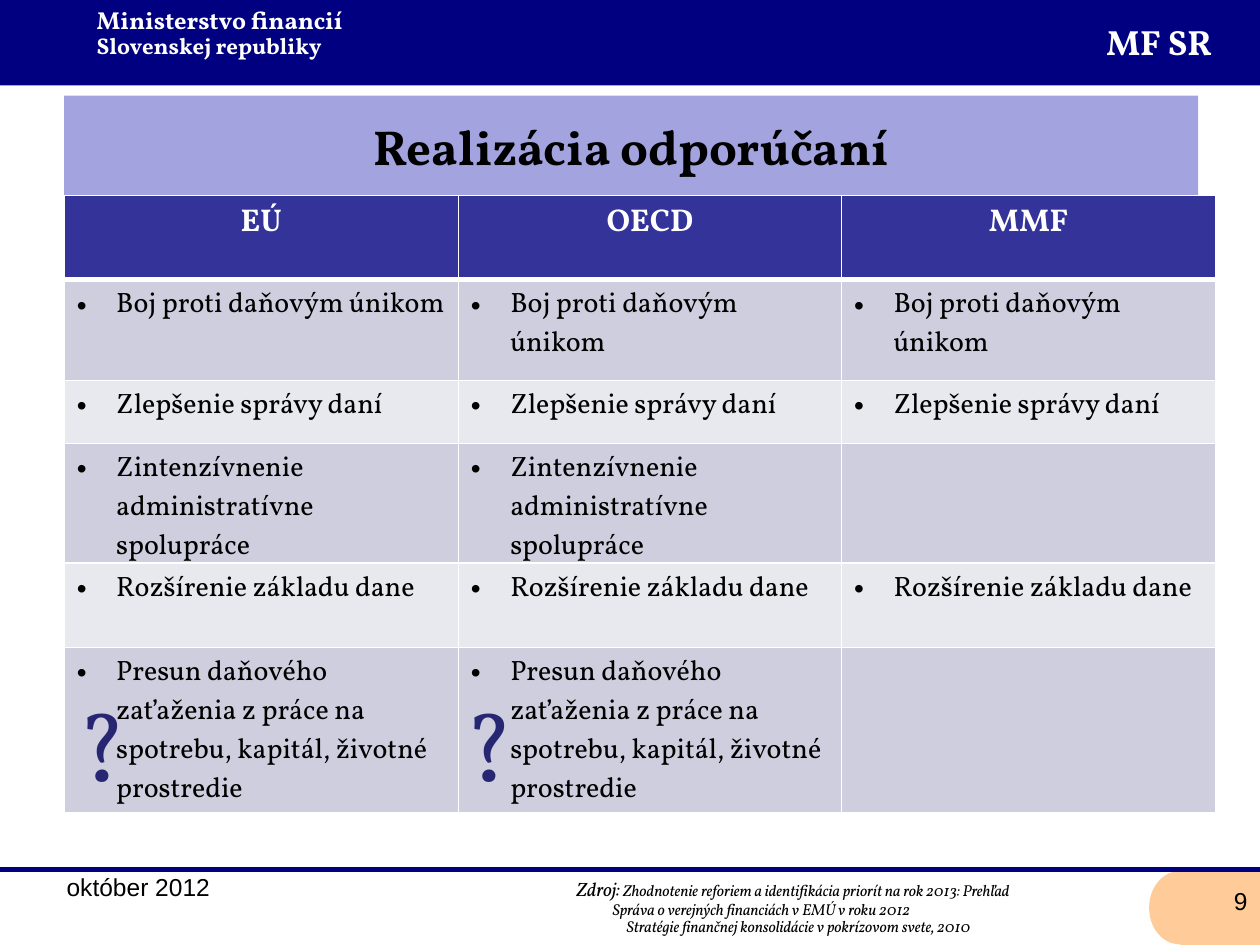
from lxml import etree
from pptx import Presentation
from pptx.dml.color import RGBColor
from pptx.enum import shapes, text
from pptx.oxml import ns
from pptx.util import Pt

COLORS = {
    "navy": "000080", "peach": "FFCC99", "lilac": "A3A3E0", "header": "333399",
    "odd": "CECEDE", "even": "E8E8EF", "mark": "262673",
    "white": "FFFFFF", "black": "000000",
}
SERIF, SANS = "Vollkorn", "Arial"
CENTER, RIGHT = text.PP_ALIGN.CENTER, text.PP_ALIGN.RIGHT


def rgb(name):
    return RGBColor.from_string(COLORS[name])


def add_xml(parent, tag, **attributes):
    return etree.SubElement(parent, ns.qn(tag), attributes)


def add_line_xml(parent, tag, color, width):
    line = add_xml(parent, tag, w=str(Pt(width)))
    add_xml(add_xml(line, "a:solidFill"), "a:srgbClr", val=COLORS[color])
    return line


class SlideBuilder:
    """Holds the text style and the current slide; lengths are in points."""

    def __init__(self, page, font=SERIF, color="black"):
        self.page, self.font, self.color = page, font, color

    def span(self, para, words, size, font=None, color=None, bold=False, italic=False):
        span = para.add_run()
        span.text = words
        style = span.font
        style.name, style.size = font or self.font, Pt(size)
        style.bold, style.italic = bold, italic
        style.color.rgb = rgb(color or self.color)
        return span

    def shape(self, kind, place, fill):
        shape = self.page.shapes.add_shape(kind, *map(Pt, place))
        shape.shadow.inherit = False
        shape.fill.solid()
        shape.fill.fore_color.rgb = rgb(fill)
        shape.line.fill.background()
        return shape

    def line(self, start, end, color, width):
        line = self.page.shapes.add_connector(
            shapes.MSO_CONNECTOR.STRAIGHT, *map(Pt, start + end))
        line.line.color.rgb = rgb(color)
        line.line.width = Pt(width)
        add_xml(line._element.spPr, "a:effectLst")

    def text_box(self, place, count=1, align=None, spacing=None):
        """Add a box and return its paragraphs."""
        box = self.page.shapes.add_textbox(*map(Pt, place))
        frame = box.text_frame
        frame.word_wrap = True
        for _ in range(count - 1):
            frame.add_paragraph()
        for para in frame.paragraphs:
            para.alignment, para.line_spacing = align, spacing
        return frame.paragraphs

    def title(self, place, words, size, fill):
        title = self.page.shapes.title
        title.left, title.top, title.width, title.height = map(Pt, place)
        title.fill.solid()
        title.fill.fore_color.rgb = rgb(fill)
        frame = title.text_frame
        frame.auto_size = text.MSO_AUTO_SIZE.NONE
        frame.vertical_anchor = text.MSO_ANCHOR.MIDDLE
        para = frame.paragraphs[0]
        para.alignment = CENTER
        self.span(para, words, size, bold=True)

    def cell(self, cell, words, fill, is_header):
        props = cell._tc.get_or_add_tcPr()
        for side in "LRTB":
            width = 3 if is_header and side == "B" else 1
            add_line_xml(props, f"a:ln{side}", "white", width)
        cell.fill.solid()
        cell.fill.fore_color.rgb = rgb(fill)
        if not words:
            return
        para = cell.text_frame.paragraphs[0]
        if is_header:
            para.alignment = CENTER
            self.span(para, words, 18, color="white", bold=True)
        else:
            bullet = para._p.get_or_add_pPr()
            bullet.set("marL", str(Pt(22.5)))
            bullet.set("indent", str(-Pt(22.5)))
            add_xml(bullet, "a:buFont", typeface=SANS)
            add_xml(bullet, "a:buChar", char="•")
            self.span(para, words, 16)

    def table(self, left, top, widths, heights, rows):
        frame = self.page.shapes.add_table(
            len(rows), len(widths), Pt(left), Pt(top), Pt(sum(widths)), Pt(sum(heights)))
        table = frame.table
        for column, width in zip(table.columns, widths):
            column.width = Pt(width)
        for r, (height, row) in enumerate(zip(heights, rows)):
            table.rows[r].height = Pt(height)
            fill = "header" if r == 0 else "odd" if r % 2 else "even"
            for c, words in enumerate(row):
                self.cell(table.cell(r, c), words, fill, r == 0)

    def question_mark(self, place):
        para = self.text_box(place, align=CENTER)[0]
        props = self.span(para, "?", 54, color="mark")._r.get_or_add_rPr()
        props.insert(0, add_line_xml(props, "a:ln", "white", 1.45))

    def footer(self, place, date, label, sources, starts):
        """Write the date and, after a tab, sources that start at the given offsets."""
        paras = self.text_box(place, len(sources), spacing=0.9)
        tabs = add_xml(paras[0]._p.get_or_add_pPr(), "a:tabLst")
        add_xml(tabs, "a:tab", pos=str(Pt(starts[0])), algn="l")
        self.span(paras[0], date + "\t", 14, SANS)
        self.span(paras[0], label, 11, italic=True)
        for para, source in zip(paras, sources):
            self.span(para, source, 9, italic=True)
        for para, start in zip(paras[1:], starts[1:]):
            props = para._p.get_or_add_pPr()
            props.set("marL", str(Pt(start)))
            props.set("indent", "0")


def main():
    deck = Presentation()
    deck.slide_width, deck.slide_height = Pt(720), Pt(540)
    slide = SlideBuilder(deck.slides.add_slide(deck.slide_layouts[5]))
    kinds = shapes.MSO_SHAPE

    slide.shape(kinds.RECTANGLE, (674.6, 498.2, 45.4, 41.8), "peach")
    slide.shape(kinds.FLOWCHART_DELAY, (656.6, 497.8, 34.6, 41.8), "peach").rotation = 180
    slide.shape(kinds.RECTANGLE, (0, 0, 720, 48.8), "navy")
    slide.line((0, 496.8), (720, 496.8), "navy", 3)

    ministry = slide.text_box((48.2, 1.4, 205.2, 40.3), 2, spacing=0.9)
    slide.span(ministry[0], "Ministerstvo financií", 14, color="white", bold=True)
    slide.span(ministry[1], "Slovenskej republiky", 13, color="white", bold=True)
    short_name = slide.text_box((607, 7.9, 110.9, 43.2), align=CENTER)[0]
    slide.span(short_name, "MF SR", 20, color="white", bold=True)

    slide.title((36.7, 54.7, 648, 56.9), "Realizácia odporúčaní", 28, "lilac")

    slide.footer(
        (31, 496.8, 623.5, 51.1), "október 2012", "Zdroj: ",
        ["Zhodnotenie reforiem a\u00a0identifikácia priorít na rok 2013: Prehľad",
         "Správa o verejných financiách v EMÚ v roku 2012",
         "Stratégie finančnej konsolidácie v\u00a0pokrízovom svete, 2010"],
        [291.5, 312, 320])
    number = slide.text_box((552.2, 502.6, 167.8, 26.6), align=RIGHT)[0]
    slide.span(number, "9", 14, SANS)

    # Each recommendation with the number of institutions, from the left, that made it
    advice = [
        ("Boj proti daňovým únikom", 3),
        ("Zlepšenie správy daní", 3),
        ("Zintenzívnenie administratívne spolupráce", 2),
        ("Rozšírenie základu dane", 3),
        ("Presun daňového zaťaženia z práce na spotrebu, kapitál, životné prostredie", 2),
    ]
    rows = [["EÚ", "OECD", "MMF"]]
    rows += [[words] * count + [""] * (3 - count) for words, count in advice]
    slide.table(36.7, 111.6, [225.2, 219, 213.8], [48.2, 57.6, 36, 68.4, 48.2, 94.3], rows)

    for left, width in ((36.7, 22.3), (257.8, 28.1)):
        slide.question_mark((left, 388.8, width, 72.7))

    deck.save("out.pptx")


if __name__ == "__main__":
    main()
